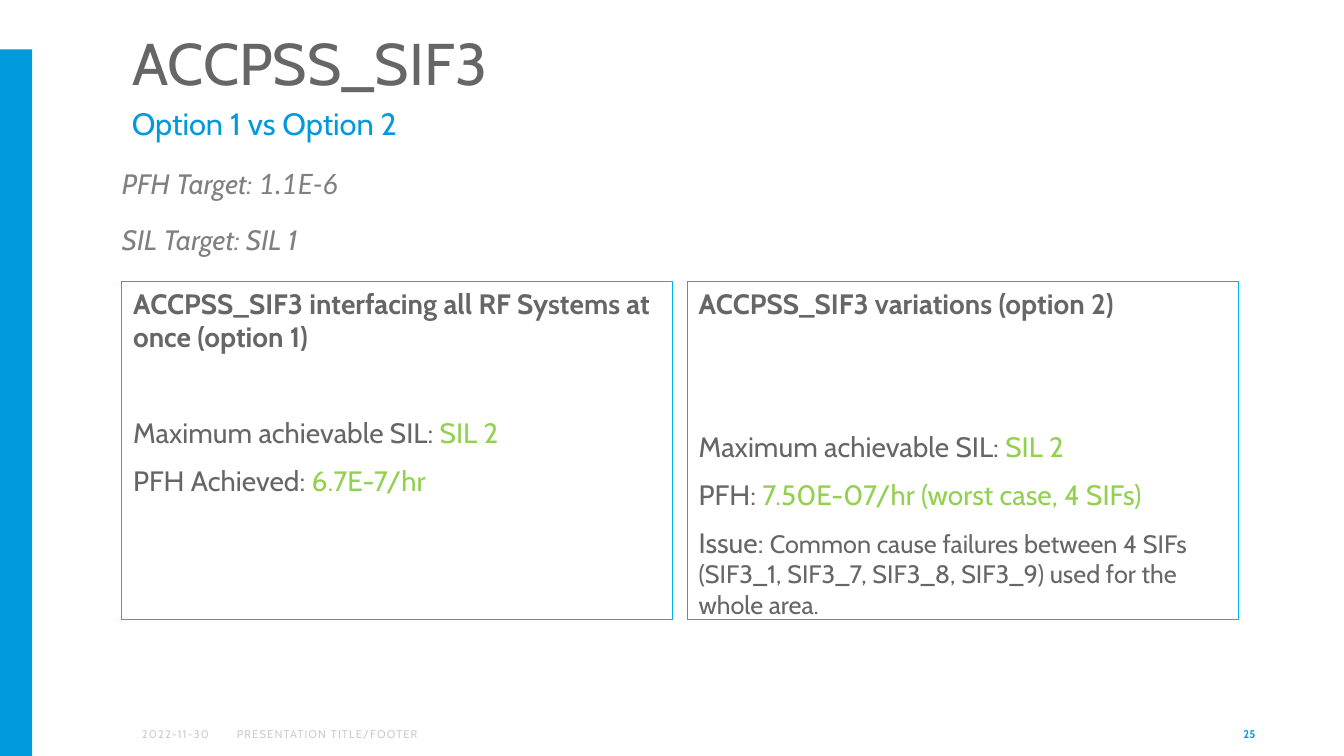
from dataclasses import dataclass

from pptx import Presentation
from pptx.dml.color import RGBColor
from pptx.enum.shapes import MSO_SHAPE as Shape
from pptx.enum.text import MSO_ANCHOR as Anchor, MSO_AUTO_SIZE as AutoSize, PP_ALIGN as Align
from pptx.util import Inches, Pt


@dataclass(frozen=True)
class Theme:
    accent: str = "0099DC"
    border: str = "00B0F0"
    text: str = "666666"
    muted: str = "808080"
    faint: str = "CCCCCC"
    good: str = "92D050"
    font: str = "Cabin"
    digits: str = "Lato"
    title: int = 42
    subtitle: int = 22
    body: int = 20
    note: int = 18
    footer: int = 8


THEME = Theme()
WIDTH, HEIGHT = 13.33, 7.5
LEFT, COLUMN, GUTTER = 1.21, 5.46, 0.15
HEADER_WIDTH = 10.24
PANEL_TOP, PANEL_HEIGHT = 2.79, 3.36
FOOTER_TOP, FOOTER_HEIGHT = 7.08, 0.4
PARAGRAPH_GAP = 10
BLANK_LINE = 34.3  # one body line with its paragraph gap, in points
PANEL_INSETS = (0.11, 0.05, 0.02, 0.05)


def set_attributes(target, **values):
    for name, value in values.items():
        setattr(target, name, value)


def add_run(paragraph, text, color=THEME.text, size=THEME.body, face=THEME.font,
            bold=False, italic=False, tracking=0):
    run = paragraph.add_run()
    run.text = text
    set_attributes(run.font, name=face, size=Pt(size), bold=bold, italic=italic)
    run.font.color.rgb = RGBColor.from_string(color)
    if tracking:
        run._r.get_or_add_rPr().set("spc", str(tracking))


def write(frame, paragraphs, insets=(0.1, 0.05, 0.1, 0.05), anchor=Anchor.TOP):
    """Fill a frame from (paragraph format, [(text, run format), ...]) pairs."""
    left, top, right, bottom = map(Inches, insets)
    set_attributes(frame, word_wrap=True, auto_size=AutoSize.NONE, vertical_anchor=anchor,
                   margin_left=left, margin_top=top, margin_right=right, margin_bottom=bottom)
    for index, (layout, runs) in enumerate(paragraphs):
        paragraph = frame.add_paragraph() if index else frame.paragraphs[0]
        set_attributes(paragraph, **{"alignment": Align.LEFT, **layout})
        for text, style in runs:
            add_run(paragraph, text, **style)


def add_text(slide, box, paragraphs, **frame_format):
    label = slide.shapes.add_textbox(*map(Inches, box))
    write(label.text_frame, paragraphs, **frame_format)


def add_rectangle(slide, box, fill=None, line=None):
    rectangle = slide.shapes.add_shape(Shape.RECTANGLE, *map(Inches, box))
    rectangle.shadow.inherit = False
    if fill:
        rectangle.fill.solid()
        rectangle.fill.fore_color.rgb = RGBColor.from_string(fill)
    else:
        rectangle.fill.background()
    if line:
        rectangle.line.color.rgb = RGBColor.from_string(line)
        rectangle.line.width = Pt(0.75)
    else:
        rectangle.line.fill.background()
    return rectangle


def add_heading(slide, title, subtitle):
    heading = slide.shapes.title
    left, top, width, height = map(Inches, (LEFT, 0.29, HEADER_WIDTH, 0.72))
    set_attributes(heading, left=left, top=top, width=width, height=height)
    write(heading.text_frame, [({"line_spacing": 0.9}, [(title, {"size": THEME.title})])],
          insets=(0.1, 0.05, 0.1, 0.02))
    add_text(slide, (LEFT, 1.02, HEADER_WIDTH, 0.55),
             [({}, [(subtitle, {"size": THEME.subtitle, "color": THEME.accent})])],
             insets=(0.1, 0.02, 0.1, 0.05))


def add_targets(slide):
    style = {"color": THEME.muted, "italic": True}
    add_text(slide, (LEFT, 1.6, 3.02, 0.99), [
        ({"space_after": Pt(6)},
         [("PFH Target: ", style), ("1.1E-6", {**style, "face": THEME.digits})]),
        ({"space_before": Pt(PARAGRAPH_GAP), "space_after": Pt(6)},
         [("SIL Target: SIL 1", style)]),
    ], insets=(0, 0.05, 0.02, 0.05))


def add_option(slide, column, heading, blank_lines, findings):
    """Draw an option panel; each finding is a list of (text, run format)."""
    box = (LEFT + column * (COLUMN + GUTTER), PANEL_TOP, COLUMN, PANEL_HEIGHT)
    paragraphs = [({}, [(heading, {"bold": True})])]
    for index, finding in enumerate(findings):
        gap = PARAGRAPH_GAP + (0 if index else blank_lines * BLANK_LINE)
        paragraphs.append(({"space_before": Pt(gap)}, finding))
    panel = add_rectangle(slide, box, line=THEME.border)
    write(panel.text_frame, paragraphs, insets=PANEL_INSETS)


def add_footer(slide):
    faint = {"color": THEME.faint, "tracking": 80}
    number = {"color": THEME.accent, "bold": True}
    for left, width, text, style, align in (
        (1.31, 0.91, "2022-11-30", faint, Align.LEFT),
        (2.25, 4.72, "PRESENTATION TITLE/FOOTER", faint, Align.LEFT),
        (9.55, 3, "25", number, Align.RIGHT),
    ):
        add_text(slide, (left, FOOTER_TOP, width, FOOTER_HEIGHT),
                 [({"alignment": align}, [(text, {**style, "size": THEME.footer})])],
                 anchor=Anchor.MIDDLE)


def main():
    deck = Presentation()
    set_attributes(deck, slide_width=Inches(WIDTH), slide_height=Inches(HEIGHT))
    slide = deck.slides.add_slide(deck.slide_layouts[5])
    good = {"color": THEME.good}
    achievable_sil = [("Maximum achievable SIL: ", {}), ("SIL 2", good)]

    add_rectangle(slide, (0, 0.49, 0.32, HEIGHT - 0.49), fill=THEME.accent)
    add_heading(slide, "ACCPSS_SIF3", "Option 1 vs Option 2")
    add_targets(slide)
    add_option(slide, 0, "ACCPSS_SIF3 interfacing all RF Systems at once (option 1)", 1, [
        achievable_sil,
        [("PFH Achieved: ", {}), ("6.7E-7/hr", good)],
    ])
    add_option(slide, 1, "ACCPSS_SIF3 variations (option 2)", 2, [
        achievable_sil,
        [("PFH: ", {}), ("7.50E-07/hr (worst case, 4 SIFs)", good)],
        [("Issue: ", {}),
         ("Common cause failures between 4 SIFs (SIF3_1, SIF3_7, SIF3_8, SIF3_9) "
          "used for the whole area.", {"size": THEME.note})],
    ])
    add_footer(slide)
    deck.save("out.pptx")


if __name__ == "__main__":
    main()
